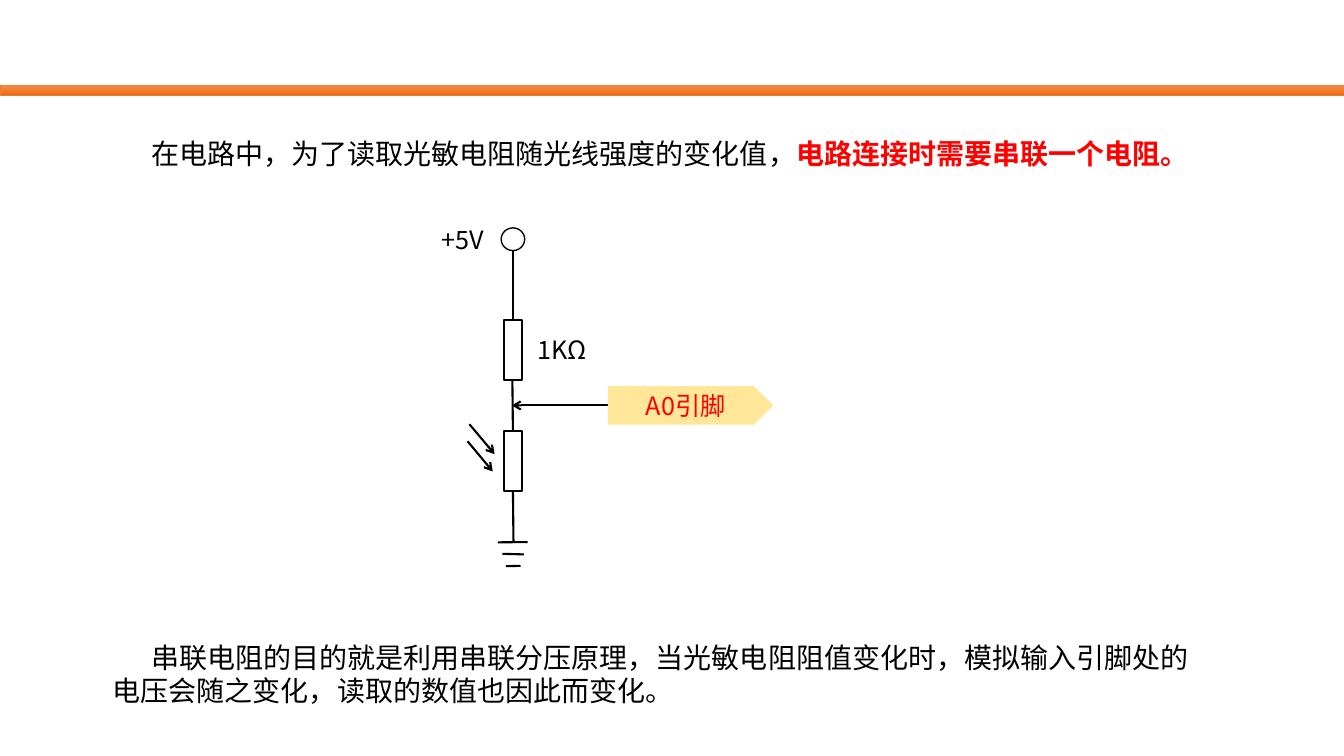
from copy import deepcopy
from pptx import Presentation
from pptx.dml.color import RGBColor
from pptx.enum.shapes import MSO_CONNECTOR, MSO_SHAPE
from pptx.enum.text import MSO_ANCHOR, PP_ALIGN
from pptx.oxml.ns import qn
from pptx.util import Pt
from lxml.etree import SubElement

FONT = "Noto Sans CJK SC"
BLACK, RED = "000000", "FF0000"


def color(target, code):
    target.rgb = RGBColor.from_string(code)


def write(para, text, size, code, bold=False):
    run = para.add_run()
    run.text = text
    run.font.size = Pt(size)
    run.font.bold = bold
    run.font.name = FONT
    color(run.font.color, code)
    SubElement(run.font._element, qn("a:ea")).set("typeface", FONT)


deck = Presentation()
deck.slide_width, deck.slide_height = Pt(960), Pt(540)
slide = deck.slides.add_slide(deck.slide_layouts[6])
shapes = slide.shapes

bar = shapes.add_shape(MSO_SHAPE.RECTANGLE, Pt(0), Pt(61), Pt(960), Pt(7.2))
bar.shadow.inherit = False
bar.fill.gradient()
bar.fill.gradient_angle = 270
stops = bar.fill.gradient_stops
last = stops[1]._gs
last.addprevious(deepcopy(last))
shades = [(0, "F18C57"), (0.5, "F67B28"), (1, "E56C19")]
for stop, (place, code) in zip(bar.fill.gradient_stops, shades):
    stop.position = place
    color(stop.color, code)
color(bar.line.color, "ED7D31")
bar.line.width = Pt(0.5)

body = shapes.add_textbox(Pt(73.4), Pt(67.7), Pt(802.8), Pt(443.5))
frame = body.text_frame
frame.word_wrap = True
frame.margin_top = Pt(29.6)
intro = frame.paragraphs[0]
reason = frame.add_paragraph()
reason.space_before = Pt(336)
for para in (intro, reason):
    para.line_spacing = Pt(24)
    para._p.get_or_add_pPr().set("indent", str(Pt(27.4)))
write(intro, "在电路中，为了读取光敏电阻随光线强度的变化值，", 20, BLACK)
write(intro, "电路连接时需要串联一个电阻。", 20, RED, True)
write(reason, "串联电阻的目的就是利用串联分压原理，当光敏电阻阻值变化时，"
      "模拟输入引脚处的电压会随之变化，读取的数值也因此而变化。", 20, BLACK)

parts = [
    (MSO_SHAPE.OVAL, 358, 162.8, 16.8, 16.2, 1),
    (MSO_SHAPE.RECTANGLE, 359.8, 228.4, 13.2, 42.8, 1.5),
    (MSO_SHAPE.RECTANGLE, 359.8, 308, 13.2, 42.8, 1.5),
]
for kind, left, top, width, height, weight in parts:
    part = shapes.add_shape(kind, Pt(left), Pt(top), Pt(width), Pt(height))
    part.shadow.inherit = False
    part.fill.background()
    color(part.line.color, BLACK)
    part.line.width = Pt(weight)

wires = [
    (366.4, 179, 366.4, 228.4, False),
    (366, 271.2, 366.4, 308, False),
    (366.4, 350.8, 366.8, 387.2, False),
    (355.7, 387.4, 376.9, 387.2, False),
    (358.8, 395.6, 374.2, 396, False),
    (361.4, 404.4, 371.8, 404.2, False),
    (434.2, 289.6, 365.6, 289.6, True),
    (335.3, 303, 353.3, 324.4, True),
    (334, 315.2, 352, 336.8, True),
]
for *ends, arrow in wires:
    wire = shapes.add_connector(MSO_CONNECTOR.STRAIGHT, *map(Pt, ends))
    color(wire.line.color, BLACK)
    wire.line.width = Pt(1.5)
    if arrow:
        SubElement(wire.line._get_or_add_ln(), qn("a:tailEnd")).set("type", "arrow")
    SubElement(wire._element.spPr, qn("a:effectLst"))

labels = [("+5V", 308.2, 156.4, 71), ("1KΩ", 376.9, 235.4, 57.6)]
for text, left, top, width in labels:
    label = shapes.add_textbox(Pt(left), Pt(top), Pt(width), Pt(29))
    label.text_frame.word_wrap = True
    label.text_frame.vertical_anchor = MSO_ANCHOR.MIDDLE
    write(label.text_frame.paragraphs[0], text, 18, BLACK)

pin = shapes.add_shape(MSO_SHAPE.PENTAGON, Pt(434.2), Pt(275.8), Pt(118.2), Pt(27.5))
pin.shadow.inherit = False
pin.fill.solid()
color(pin.fill.fore_color, "FFE699")
pin.line.fill.background()
pin.text_frame.vertical_anchor = MSO_ANCHOR.MIDDLE
name = pin.text_frame.paragraphs[0]
name.alignment = PP_ALIGN.CENTER
write(name, "A0引脚", 18, RED)

deck.save("out.pptx")
